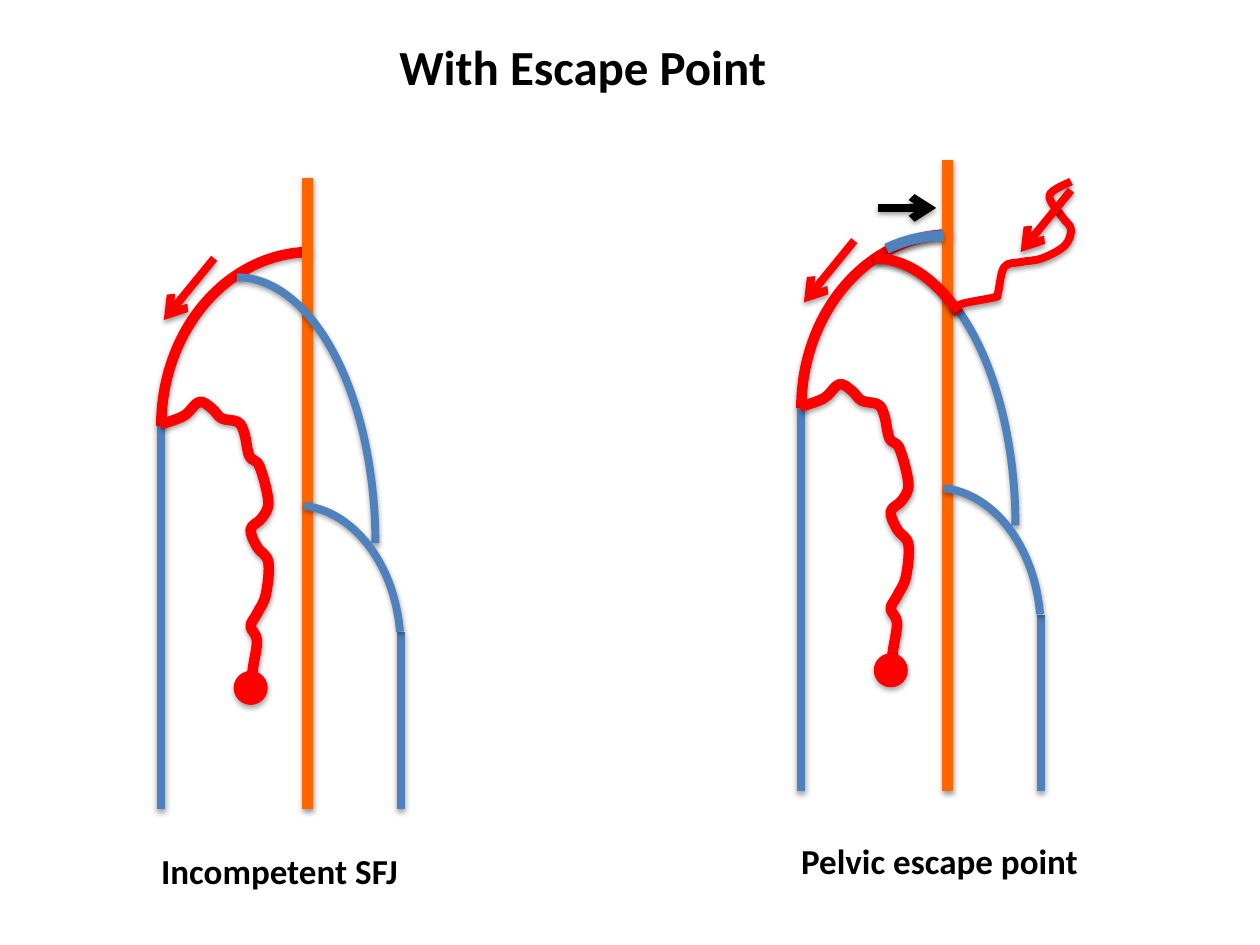
from dataclasses import dataclass
from lxml.etree import SubElement
from pptx import Presentation
from pptx.dml.color import RGBColor as Rgb
from pptx.enum.shapes import MSO_CONNECTOR as Link, MSO_SHAPE as Kind
from pptx.enum.text import MSO_ANCHOR as Anchor, MSO_AUTO_SIZE as Fit, PP_ALIGN as Align
from pptx.oxml.ns import qn
from pptx.util import Pt

PX = 9144


@dataclass(frozen=True)
class Theme:
    red: str = "FF0000"
    blue: str = "4F81BD"
    orange: str = "FF6600"
    black: str = "000000"
    font: str = "Calibri"
    head: int = 28
    label: int = 20
    thick: float = 6
    mid: float = 4.5
    thin: float = 0.75


THEME = Theme()

BRANCH = [
    (27, 237), (46, 230), (58, 219), (68, 224), (76, 232), (89, 235), (94, 244),
    (98, 262), (106, 270), (113, 298), (108, 311), (99, 320), (104, 334), (113, 346),
    (111, 372), (104, 387), (99, 397), (104, 408), (101, 429), (99, 444),
]
PELVIC = [
    (242, 58), (225, 69), (235, 86), (242, 96), (237, 109), (219, 119),
    (202, 122), (189, 126), (184, 147), (181, 150), (156, 155), (148, 160),
]


def shade(shape, alpha=38, dist=20000):
    props = shape.element.spPr
    cast = SubElement(SubElement(props, qn("a:effectLst")), qn("a:outerShdw"),
                      blurRad="40000", dist=str(dist), dir="5400000", rotWithShape="0")
    tint = SubElement(cast, qn("a:srgbClr"), val=THEME.black)
    SubElement(tint, qn("a:alpha"), val=str(alpha * 1000))


def stroke(shape, color, width):
    shape.line.color.rgb = Rgb.from_string(color)
    shape.line.width = Pt(width)


def oval(slide, kind, center, radii):
    (x, y), (wide, high) = center, radii
    box = (x - wide, y - high, 2 * wide, 2 * high)
    return slide.shapes.add_shape(kind, *(n * PX for n in box))


def arc(slide, center, radii, color, width, flip=False, span=(162, 0)):
    shape = oval(slide, Kind.ARC, center, radii)
    shape.fill.background()
    shape.adjustments[0], shape.adjustments[1] = span
    if flip:
        shape.element.spPr.xfrm.set("flipH", "1")
    stroke(shape, color, width)
    shade(shape)


def line(slide, start, end, color, width, arrow=False):
    link = slide.shapes.add_connector(Link.STRAIGHT, *(n * PX for n in (*start, *end)))
    stroke(link, color, width)
    if arrow:
        SubElement(link.element.spPr.find(qn("a:ln")), qn("a:tailEnd"), type="arrow")
    shade(link)


def flow(slide, x, y):
    line(slide, (x, y), (x - 40, y + 49), THEME.red, THEME.mid, arrow=True)


def smooth(shape):
    marks = shape.element.xpath(".//a:pt")
    knots = [(int(mark.get("x")), int(mark.get("y"))) for mark in marks]
    chain = [knots[0], *knots, knots[-1]]
    for mark, *near in zip(marks[1:], chain, chain[1:], chain[2:], chain[3:]):
        step = mark.getparent()
        bend = SubElement(step.getparent(), qn("a:cubicBezTo"))
        step.addprevious(bend)
        step.getparent().remove(step)
        pairs = [(b + (c - a) / 6, c - (d - b) / 6, c) for a, b, c, d in zip(*near)]
        for x, y in zip(*pairs):
            SubElement(bend, qn("a:pt"), x=str(round(x)), y=str(round(y)))


def curve(slide, x, y, knots, color, width):
    first, *rest = [((x + dx) * PX, (y + dy) * PX) for dx, dy in knots]
    pen = slide.shapes.build_freeform(*first)
    pen.add_line_segments(rest, close=False)
    shape = pen.convert_to_shape()
    smooth(shape)
    shape.fill.background()
    stroke(shape, color, width)
    shade(shape)


def write(frame, text, size):
    frame.word_wrap = False
    frame.auto_size = Fit.SHAPE_TO_FIT_TEXT
    frame.vertical_anchor = Anchor.TOP
    para = frame.paragraphs[0]
    para.alignment = Align.LEFT
    run = para.add_run()
    run.text = text
    run.font.name = THEME.font
    run.font.size = Pt(size)
    run.font.bold = True
    run.font.color.rgb = Rgb.from_string(THEME.black)


def title(slide, box, text):
    head = slide.shapes.title
    head.left, head.top, head.width, head.height = (n * PX for n in box)
    write(head.text_frame, text, THEME.head)


def label(slide, box, text):
    note = slide.shapes.add_textbox(*(n * PX for n in box))
    write(note.text_frame, text, THEME.label)


def leg(slide, x, y):
    t = THEME
    deep, inner, outer = x + 144, x + 28, x + 218
    groin, knee, calf, foot = y + 41, y + 238, y + 402, y + 542
    arc(slide, (inner + 119, knee), (119, 138), t.red, t.thick, flip=True)
    line(slide, (deep, groin), (deep, foot), t.orange, t.thick)
    arc(slide, (x + 88, y + 331), (110, 211), t.blue, t.mid)
    for side, top in ((inner, knee), (outer, calf)):
        line(slide, (side, top), (side, foot), t.blue, t.mid)
    arc(slide, (outer - 84, y + 414), (84, 113), t.blue, t.mid, span=(164.21, 210.86))
    curve(slide, x, y, BRANCH, t.red, t.thick)
    ball = oval(slide, Kind.OVAL, (x + 99, y + 446), (13, 13))
    ball.fill.solid()
    ball.fill.fore_color.rgb = Rgb.from_string(t.red)
    stroke(ball, t.red, t.thin)
    shade(ball, 35, 23000)
    flow(slide, x + 70, y + 105)


def escape(slide, x, y):
    t = THEME
    arc(slide, (x + 141, y + 239), (119, 138), t.blue, t.thick, flip=True, span=(162, 173.74))
    arc(slide, (x + 86, y + 330), (110, 211), t.red, t.thick, span=(162, 175.08))
    curve(slide, x, y, PELVIC, t.red, t.mid)
    flow(slide, x + 242, y + 65)
    line(slide, (x + 89, y + 79), (x + 135, y + 79), t.black, t.mid, arrow=True)


def main():
    deck = Presentation()
    deck.slide_width, deck.slide_height = 1000 * PX, 750 * PX
    slide = deck.slides.add_slide(deck.slide_layouts[5])
    title(slide, (307, 24, 316, 57), "With Escape Point")
    panels = [
        ((100, 100), (leg,), (569, 212), "Incompetent SFJ"),
        ((608, 86), (leg, escape), (575, 243), "Pelvic escape point"),
    ]
    for (x, y), parts, (drop, wide), text in panels:
        for draw in parts:
            draw(slide, x, y)
        label(slide, (x + 18, y + drop, wide, 44), text)
    deck.save("out.pptx")


if __name__ == "__main__":
    main()
